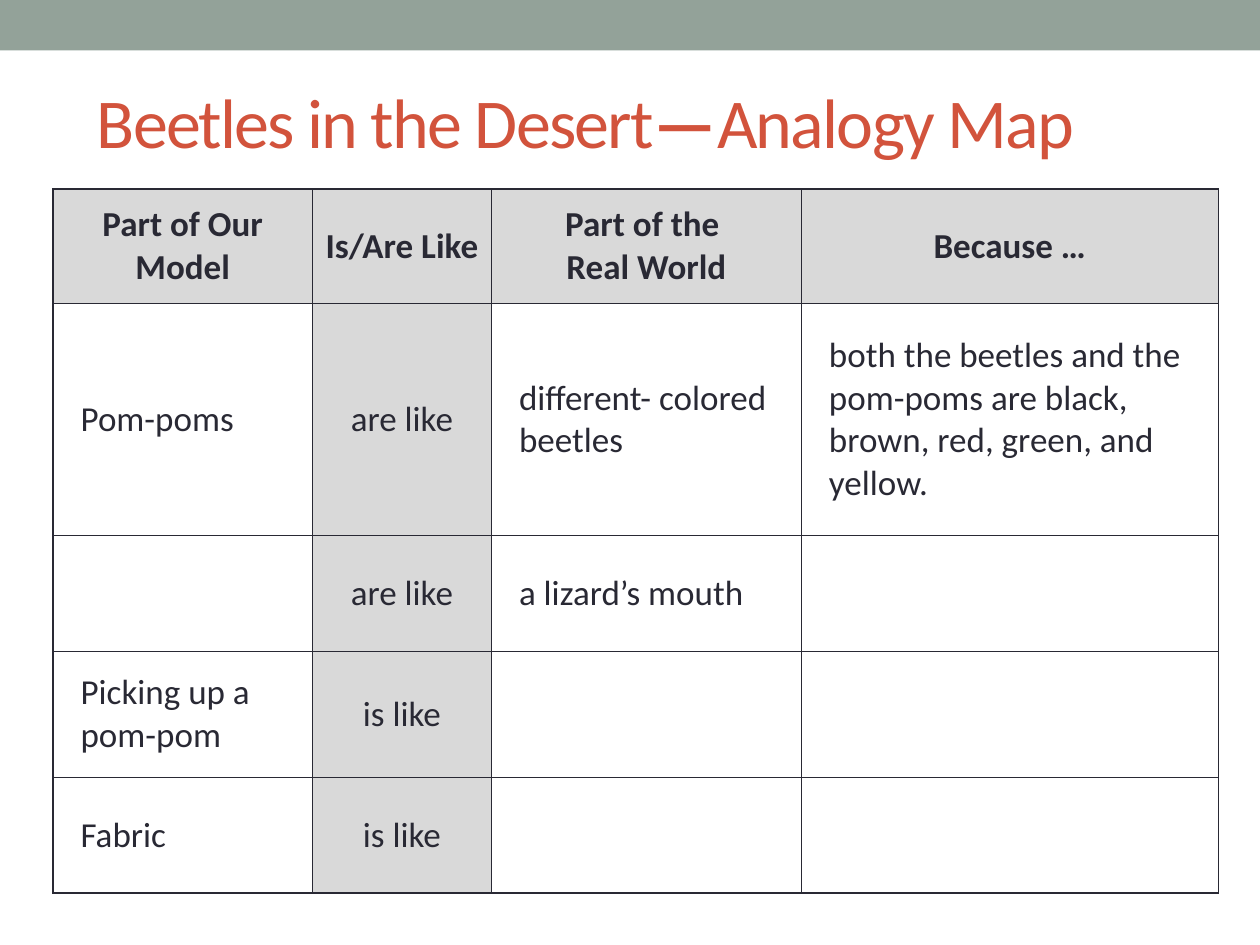
"""Build the analogy map slide: a top band, a title and a bordered table."""
from dataclasses import dataclass
from typing import NamedTuple

import pptx
import pptx.dml.color
import pptx.enum.shapes
import pptx.enum.text
import pptx.oxml
import pptx.oxml.ns
import pptx.util

Inches = pptx.util.Inches
Align = pptx.enum.text.PP_ALIGN
Anchor = pptx.enum.text.MSO_ANCHOR


@dataclass(frozen=True)
class Theme:
    font: str = "Calibri"
    band: str = "93A299"
    title: str = "D2533C"
    ink: str = "292934"
    shade: str = "D9D9D9"
    paper: str = "FFFFFF"
    title_size: int = 40
    cell_size: int = 20
    border_width: int = 1


class Area(NamedTuple):
    left: float
    top: float
    width: float
    height: float

    def lengths(self) -> list:
        return [Inches(value) for value in self]


class Row(NamedTuple):
    height: float
    texts: tuple[str, str, str, str]


THEME = Theme()
PAGE = Area(0, 0, 10, 7.5)
BAND = PAGE._replace(height=0.4)
TITLE = Area(0.67, 0.42, 8.83, 1.08)
TITLE_SPANS = (("Beetles in the Desert", False), ("—", True), ("Analogy Map", False))
COLUMNS = (2.06, 1.42, 2.46, 3.31)
LINK_COLUMN = 1
ROWS = (
    Row(0.91, ("Part of Our Model", "Is/Are Like", "Part of the \vReal World", "Because …")),
    Row(1.84, ("Pom-poms", "are like", "different- colored beetles",
               "both the beetles and the pom-poms are black, brown, red, green, and yellow.")),
    Row(0.92, ("", "are like", "a lizard’s mouth", "")),
    Row(1, ("Picking up a pom-pom", "is like", "", "")),
    Row(0.92, ("Fabric", "is like", "", "")),
)
TABLE = Area(0.42, 1.5, sum(COLUMNS), sum(row.height for row in ROWS))


def color(code: str) -> pptx.dml.color.RGBColor:
    return pptx.dml.color.RGBColor.from_string(code)


def style_font(font, size: int, code: str, bold: bool) -> None:
    font.name = THEME.font
    font.size = pptx.util.Pt(size)
    font.bold = bold
    font.color.rgb = color(code)


def draw_band(page) -> None:
    band = page.shapes.add_shape(pptx.enum.shapes.MSO_SHAPE.RECTANGLE, *BAND.lengths())
    band.shadow.inherit = False
    band.fill.solid()
    band.fill.fore_color.rgb = color(THEME.band)
    band.line.fill.background()


def draw_title(page) -> None:
    frame = page.shapes.add_textbox(*TITLE.lengths()).text_frame
    frame.word_wrap = True
    frame.vertical_anchor = Anchor.MIDDLE
    for text, bold in TITLE_SPANS:
        span = frame.paragraphs[0].add_run()
        span.text = text
        style_font(span.font, THEME.title_size, THEME.title, bold)
        span.font._element.set("spc", "-100")


def add_borders(cell) -> None:
    properties = cell._tc.get_or_add_tcPr()
    for position, side in enumerate("LRTB"):
        properties.insert(position, pptx.oxml.parse_xml(
            f'<a:ln{side} {pptx.oxml.ns.nsdecls("a")} w="{pptx.util.Pt(THEME.border_width)}">'
            f'<a:solidFill><a:srgbClr val="{THEME.ink}"/></a:solidFill></a:ln{side}>'))


def fill_cell(cell, text: str, header: bool, link: bool) -> None:
    cell.margin_left = cell.margin_right = Inches(0.07)
    cell.margin_top = cell.margin_bottom = 0
    cell.vertical_anchor = Anchor.MIDDLE
    cell.fill.solid()
    cell.fill.fore_color.rgb = color(THEME.shade if header or link else THEME.paper)
    add_borders(cell)
    paragraph = cell.text_frame.paragraphs[0]
    paragraph.text = text
    if header or link:
        paragraph.alignment = Align.CENTER
    else:
        indent = paragraph._p.get_or_add_pPr()
        indent.set("marL", str(Inches(0.15)))
        indent.set("indent", "0")
    for span in paragraph.runs:
        style_font(span.font, THEME.cell_size, THEME.ink, header)


def draw_table(page) -> None:
    table = page.shapes.add_table(len(ROWS), len(COLUMNS), *TABLE.lengths()).table
    table.horz_banding = False
    for column, width in zip(table.columns, COLUMNS):
        column.width = Inches(width)
    for row_index, row in enumerate(ROWS):
        table.rows[row_index].height = Inches(row.height)
        for column_index, text in enumerate(row.texts):
            fill_cell(table.cell(row_index, column_index), text,
                      row_index == 0, column_index == LINK_COLUMN)


def main() -> None:
    deck = pptx.Presentation()
    deck.slide_width, deck.slide_height = Inches(PAGE.width), Inches(PAGE.height)
    page = deck.slides.add_slide(deck.slide_layouts[6])
    draw_band(page)
    draw_title(page)
    draw_table(page)
    deck.save("out.pptx")


if __name__ == "__main__":
    main()
